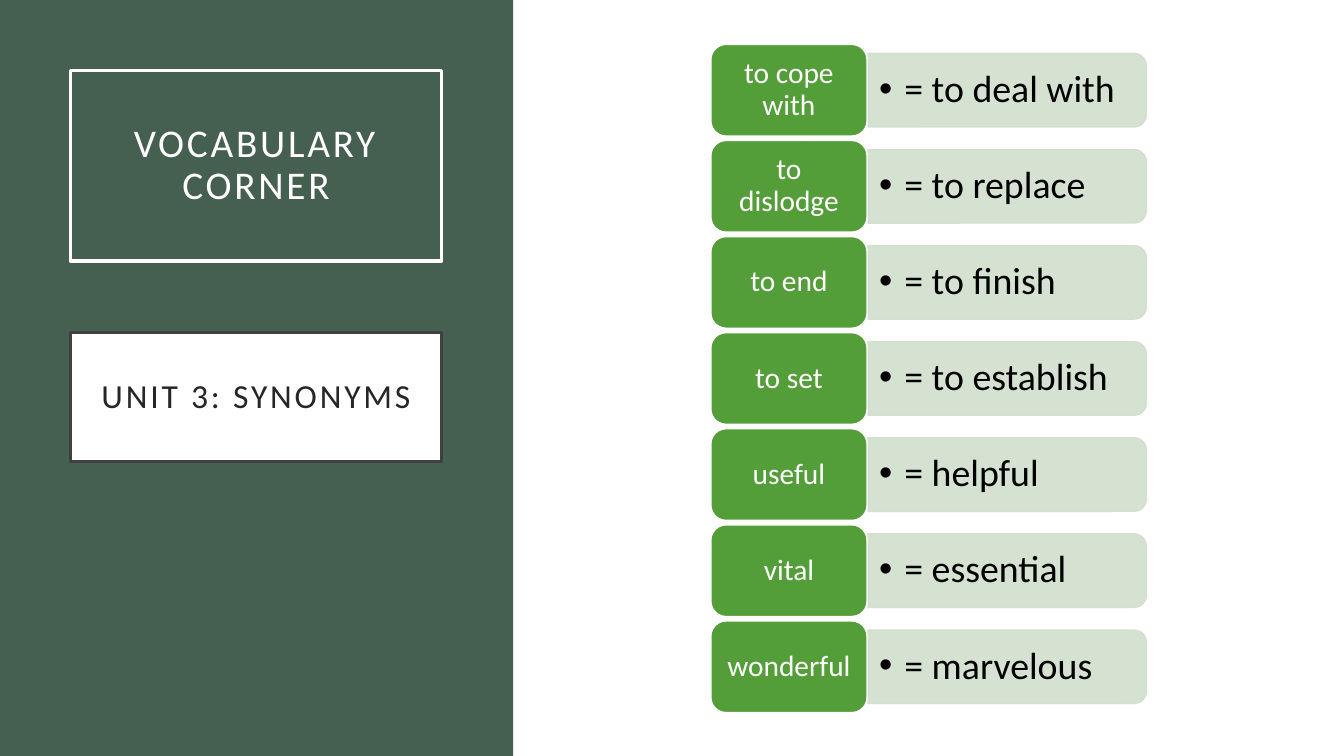
from dataclasses import dataclass

from lxml.etree import SubElement
from pptx import Presentation
from pptx.dml.color import RGBColor
from pptx.enum.shapes import MSO_SHAPE
from pptx.enum.text import MSO_ANCHOR, MSO_AUTO_SIZE, PP_ALIGN
from pptx.oxml.ns import qn
from pptx.shapes.autoshape import Shape
from pptx.slide import Slide
from pptx.util import Inches, Pt

FONT = "Calibri"
WHITE = "FFFFFF"
DARK_GREEN = "455F51"
LEAF_GREEN = "549E39"
PALE_GREEN = "D1DFCE"

LABEL_LEFT, LABEL_WIDTH, LABEL_HEIGHT = 7.05, 1.55, 0.91
BAR_LEFT, BAR_LENGTH, BAR_HEIGHT = 8.61, 2.76, 0.73
TEXT_WIDTH, TEXT_HEIGHT = 2.73, 0.66
FIRST_TOP, LAST_TOP = 0.44, 6.16


@dataclass(frozen=True)
class Synonym:
    term: str
    meaning: str


@dataclass(frozen=True)
class TextStyle:
    size: int
    color: str
    horizontal_inset: float
    vertical_inset: float
    align: PP_ALIGN = PP_ALIGN.CENTER
    letter_spacing: int = 0


TITLE_STYLE = TextStyle(28, WHITE, 0.2, 0.2, letter_spacing=2)
UNIT_STYLE = TextStyle(24, "262626", 0.2, 0.2, letter_spacing=2)
TERM_STYLE = TextStyle(21, WHITE, 0.09, 0.04)
MEANING_STYLE = TextStyle(27, "000000", 0.11, 0.06, PP_ALIGN.LEFT)

SYNONYMS = [
    Synonym("to cope with", "= to deal with"),
    Synonym("to dislodge", "= to replace"),
    Synonym("to end", "= to finish"),
    Synonym("to set", "= to establish"),
    Synonym("useful", "= helpful"),
    Synonym("vital", "= essential"),
    Synonym("wonderful", "= marvelous"),
]


def rgb(color: str) -> RGBColor:
    return RGBColor.from_string(color)


def set_line(shape: Shape, color: str, width: float) -> None:
    shape.line.color.rgb = rgb(color)
    shape.line.width = Pt(width)


def add_filled_shape(slide: Slide, kind: MSO_SHAPE, left: float, top: float,
                     width: float, height: float, color: str) -> Shape:
    shape = slide.shapes.add_shape(
        kind, Inches(left), Inches(top), Inches(width), Inches(height))
    shape.shadow.inherit = False
    shape.fill.solid()
    shape.fill.fore_color.rgb = rgb(color)
    shape.line.fill.background()
    return shape


def write_text(shape: Shape, text: str, style: TextStyle) -> None:
    frame = shape.text_frame
    frame.word_wrap = True
    frame.auto_size = MSO_AUTO_SIZE.NONE
    frame.vertical_anchor = MSO_ANCHOR.MIDDLE
    frame.margin_left = frame.margin_right = Inches(style.horizontal_inset)
    frame.margin_top = frame.margin_bottom = Inches(style.vertical_inset)
    paragraph = frame.paragraphs[0]
    paragraph.alignment = style.align
    paragraph.line_spacing = 0.9
    run = paragraph.add_run()
    run.text = text
    run.font.name = FONT
    run.font.size = Pt(style.size)
    run.font.color.rgb = rgb(style.color)
    if style.letter_spacing:
        run.font._element.set("spc", str(style.letter_spacing * 100))


def add_bullet(shape: Shape) -> None:
    properties = shape.text_frame.paragraphs[0]._p.get_or_add_pPr()
    properties.set("marL", str(Inches(0.25)))
    properties.set("indent", str(-Inches(0.25)))
    SubElement(properties, qn("a:buFont")).set("typeface", "Arial")
    SubElement(properties, qn("a:buChar")).set("char", "•")


def make_translucent(shape: Shape, percent: int) -> None:
    """Apply one opacity to the fill and the outline."""
    for color in shape._element.spPr.iter(qn("a:srgbClr")):
        SubElement(color, qn("a:alpha")).set("val", str(percent * 1000))


def add_synonym(slide: Slide, synonym: Synonym, top: float) -> None:
    middle = top + LABEL_HEIGHT / 2

    # The bar is drawn upright and turned so its rounded end faces right.
    bar = add_filled_shape(
        slide, MSO_SHAPE.ROUND_2_SAME_RECTANGLE,
        BAR_LEFT + (BAR_LENGTH - BAR_HEIGHT) / 2, middle - BAR_LENGTH / 2,
        BAR_HEIGHT, BAR_LENGTH, PALE_GREEN)
    bar.rotation = 90
    set_line(bar, PALE_GREEN, 1)
    make_translucent(bar, 90)

    meaning = slide.shapes.add_textbox(
        Inches(BAR_LEFT), Inches(middle - TEXT_HEIGHT / 2),
        Inches(TEXT_WIDTH), Inches(TEXT_HEIGHT))
    write_text(meaning, synonym.meaning, MEANING_STYLE)
    add_bullet(meaning)

    label = add_filled_shape(slide, MSO_SHAPE.ROUNDED_RECTANGLE, LABEL_LEFT, top,
                             LABEL_WIDTH, LABEL_HEIGHT, LEAF_GREEN)
    set_line(label, WHITE, 1)
    write_text(label, synonym.term, TERM_STYLE)


def add_side_panel(slide: Slide) -> None:
    panel = add_filled_shape(slide, MSO_SHAPE.RECTANGLE, 0, 0, 5.09, 7.5, DARK_GREEN)
    slide.shapes._spTree.insert(2, panel._element)  # behind the title

    title = slide.shapes.title
    title.left, title.top = Inches(0.7), Inches(0.7)
    title.width, title.height = Inches(3.68), Inches(1.89)
    set_line(title, WHITE, 2.5)
    write_text(title, "VOCABULARY CORNER", TITLE_STYLE)

    unit = add_filled_shape(slide, MSO_SHAPE.RECTANGLE, 0.7, 3.3, 3.68, 1.28, WHITE)
    set_line(unit, "404040", 2.5)
    write_text(unit, "UNIT 3: SYNONYMS", UNIT_STYLE)


def main() -> None:
    presentation = Presentation()
    presentation.slide_width = Inches(13.33)
    presentation.slide_height = Inches(7.5)
    title_only = presentation.slide_layouts[5]
    slide = presentation.slides.add_slide(title_only)

    add_side_panel(slide)
    pitch = (LAST_TOP - FIRST_TOP) / (len(SYNONYMS) - 1)
    for row, synonym in enumerate(SYNONYMS):
        add_synonym(slide, synonym, FIRST_TOP + row * pitch)

    presentation.save("out.pptx")


if __name__ == "__main__":
    main()
